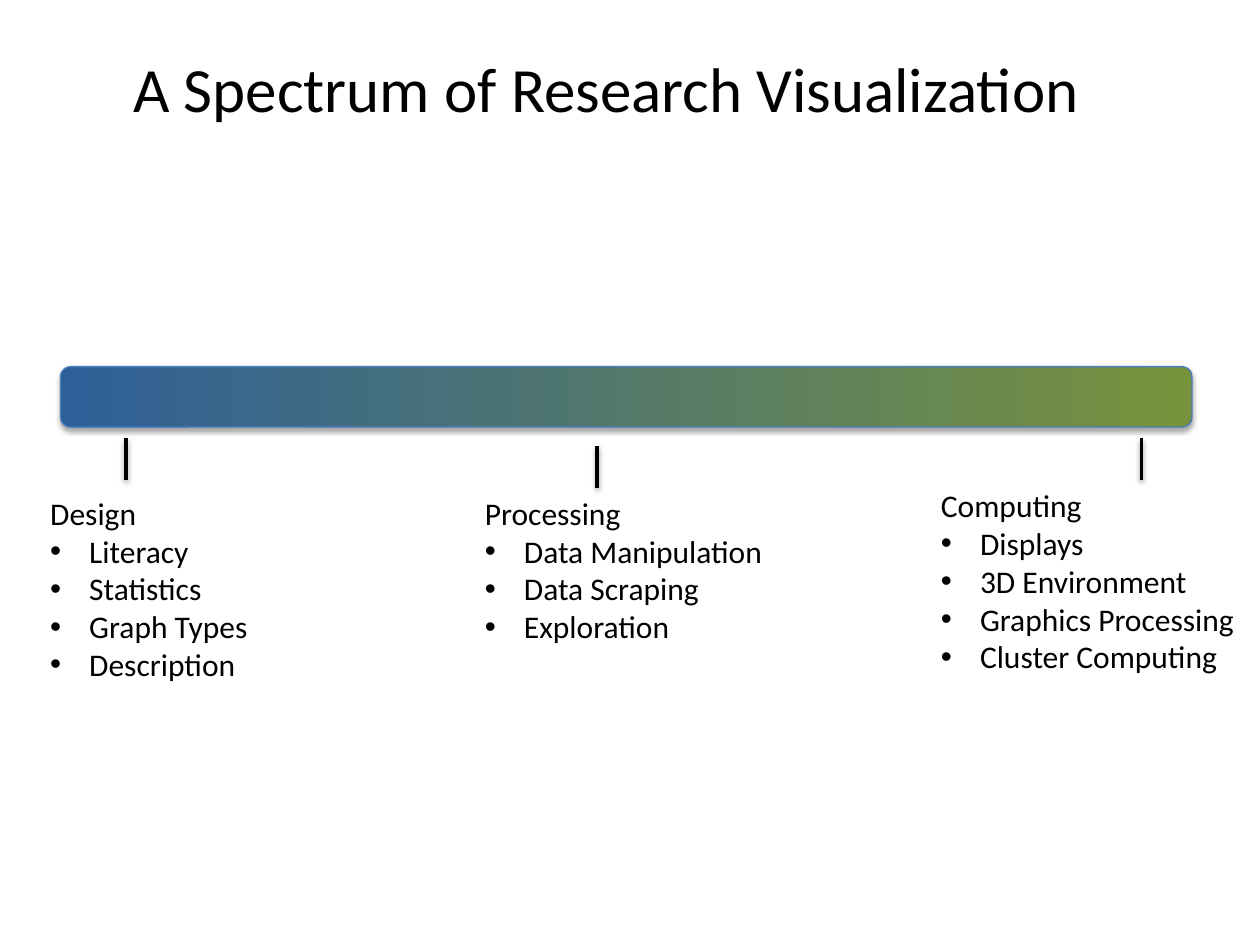
from lxml import etree
from pptx import Presentation
from pptx import util as u
from pptx.dml.color import RGBColor
from pptx.enum import shapes, text
from pptx.oxml import ns

COLORS = {"blue": "2F5F99", "green": "77933C", "outline": "4B7EBC", "black": "000000"}
FONT = "Calibri"
INDENT = u.Inches(0.31)
TOPICS = [
    (0.3, 3.87, 2.71, 1.62, True, "Design",
     ["Literacy", "Statistics", "Graph Types", "Description"]),
    (7.37, 3.81, 2.54, 1.62, False, "Computing",
     ["Displays", "3D Environment", "Graphics Processing", "Cluster Computing"]),
    (3.75, 3.87, 2.71, 1.31, True, "Processing",
     ["Data Manipulation", "Data Scraping", "Exploration"]),
]
TICKS = [(9.06, 3.48), (4.74, 3.54), (1, 3.48)]
TICK_HEIGHT = 0.33


def rgb(name):
    return RGBColor.from_string(COLORS[name])


def add_shadow(sp, alpha, dist):
    spPr = sp._element.spPr
    for old in spPr.findall(ns.qn("a:effectLst")):
        spPr.remove(old)
    effects = etree.SubElement(spPr, ns.qn("a:effectLst"))
    shadow = etree.SubElement(effects, ns.qn("a:outerShdw"), blurRad=str(u.Pt(3.1)),
                              dist=str(u.Pt(dist)), dir="5400000", rotWithShape="0")
    color = etree.SubElement(shadow, ns.qn("a:srgbClr"), val=COLORS["black"])
    etree.SubElement(color, ns.qn("a:alpha"), val=str(alpha * 1000))


def add_bullet(p):
    pPr = p._p.get_or_add_pPr()
    pPr.set("marL", str(INDENT))
    pPr.set("indent", str(-INDENT))
    etree.SubElement(pPr, ns.qn("a:buFont"), typeface="Arial")
    etree.SubElement(pPr, ns.qn("a:buChar"), char="•")


def add_text(s, box, heading, bullets=(), size=18, wrap=True):
    tf = s.shapes.add_textbox(*map(u.Inches, box)).text_frame
    tf.word_wrap = wrap
    tf.auto_size = text.MSO_AUTO_SIZE.SHAPE_TO_FIT_TEXT
    for i, line in enumerate([heading, *bullets]):
        p = tf.add_paragraph() if i else tf.paragraphs[0]
        if i:
            add_bullet(p)
        r = p.add_run()
        r.text = line
        r.font.name = FONT
        r.font.size = u.Pt(size)
        r.font.color.rgb = rgb("black")


def add_spectrum(s, box):
    sp = s.shapes.add_shape(shapes.MSO_SHAPE.ROUNDED_RECTANGLE, *map(u.Inches, box))
    sp.fill.gradient()
    sp.fill.gradient_angle = 0
    for stop, position, name in zip(sp.fill.gradient_stops, (0, 1), ("blue", "green")):
        stop.position = position
        stop.color.rgb = rgb(name)
    sp.line.color.rgb = rgb("outline")
    sp.line.width = u.Pt(0.75)
    add_shadow(sp, alpha=35, dist=1.8)


def add_tick(s, x, y):
    tick = s.shapes.add_connector(shapes.MSO_CONNECTOR.STRAIGHT, u.Inches(x), u.Inches(y),
                                  u.Inches(x), u.Inches(y + TICK_HEIGHT))
    tick.line.color.rgb = rgb("black")
    tick.line.width = u.Pt(2)
    add_shadow(tick, alpha=38, dist=1.6)


def main():
    prs = Presentation()
    prs.slide_width, prs.slide_height = u.Inches(10), u.Inches(7.5)
    s = prs.slides.add_slide(prs.slide_layouts[6])
    add_spectrum(s, (0.48, 2.91, 8.98, 0.48))
    add_text(s, (0.96, 0.34, 7.95, 0.71), "A Spectrum of Research Visualization", size=36)
    for *box, wrap, heading, bullets in TOPICS:
        add_text(s, box, heading, bullets, wrap=wrap)
    for x, y in TICKS:
        add_tick(s, x, y)
    prs.save("out.pptx")


if __name__ == "__main__":
    main()
